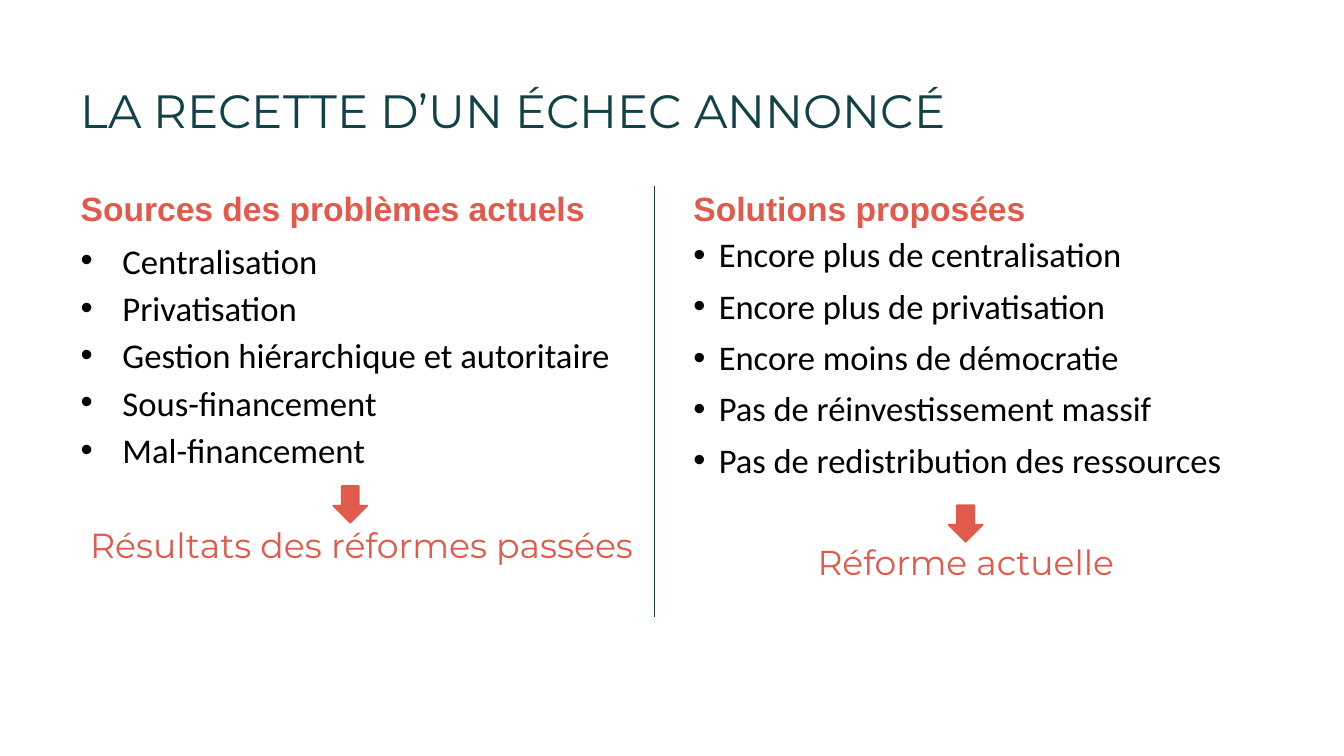
from lxml.etree import SubElement
from pptx import Presentation
from pptx.dml.color import RGBColor
from pptx.enum.shapes import MSO_CONNECTOR as Connector, MSO_SHAPE as Shape
from pptx.enum.text import MSO_ANCHOR as Anchor, MSO_AUTO_SIZE as AutoSize, PP_ALIGN as Align
from pptx.oxml.ns import qn
from pptx.util import Cm, Pt

COLORS = {"teal": "124248", "coral": "E15A4B", "black": "000000"}
TITLE = "LA RECETTE D’UN ÉCHEC ANNONCÉ"
COLUMNS = [
    {
        "heading": "Sources des problèmes actuels",
        "items": ["Centralisation", "Privatisation", "Gestion hiérarchique et autoritaire",
                  "Sous-financement", "Mal-financement"],
        "conclusion": "Résultats des réformes passées",
        "left": 1.27, "heading_width": 10.74, "list_width": 11.13, "list_top": 4.55,
        "size": 18.6, "spacing": 0.8, "indent": 0.79, "gap": 33,
        "arrow": (6.3, 9.19),
    },
    {
        "heading": "Solutions proposées",
        "items": ["Encore plus de centralisation", "Encore plus de privatisation",
                  "Encore moins de démocratie", "Pas de réinvestissement massif",
                  "Pas de redistribution des ressources"],
        "conclusion": "Réforme actuelle",
        "left": 12.85, "heading_width": 10.8, "list_width": 10.8, "list_top": 4.37,
        "size": 18.5, "spacing": 0.9, "indent": 0.48, "gap": 35,
        "arrow": (17.93, 9.55),
    },
]
HEADING_TOP, HEADING_HEIGHT = 3.51, 1.73
LIST_BOTTOM = 11.66
DIVIDER_X = 12.37


def color(name):
    return RGBColor.from_string(COLORS[name])


def place(box, left, top, width, height, anchor=Anchor.TOP):
    box.left, box.top, box.width, box.height = Cm(left), Cm(top), Cm(width), Cm(height)
    frame = box.text_frame
    frame.word_wrap = True
    frame.auto_size = AutoSize.NONE
    frame.vertical_anchor = anchor
    return frame


def set_bullet(para, indent=0):
    properties = para._p.get_or_add_pPr()
    properties.set("marL", str(Cm(indent)))
    properties.set("indent", str(-Cm(indent)))
    if indent:
        SubElement(properties, qn("a:buFont")).set("typeface", "Arial")
        SubElement(properties, qn("a:buChar")).set("char", "•")
    else:
        SubElement(properties, qn("a:buNone"))


def write(para, text, font, size, shade, spacing=0.9, before=0, align=Align.LEFT, bold=False):
    para.text = text
    para.alignment = align
    para.line_spacing = spacing
    para.space_before = Pt(before)
    para.font.name = font
    para.font.size = Pt(size)
    para.font.bold = bold
    para.font.color.rgb = color(shade)


def fill_list(frame, column):
    size, spacing = column["size"], column["spacing"]
    for number, item in enumerate(column["items"]):
        para = frame.add_paragraph() if number else frame.paragraphs[0]
        set_bullet(para, column["indent"])
        write(para, item, "Calibri", size, "black", spacing, 7.5 if number else 0)
    para = frame.add_paragraph()
    set_bullet(para)
    write(para, column["conclusion"], "Montserrat", size, "coral", spacing,
          column["gap"], Align.CENTER)


def add_arrow(page, left, top):
    arrow = page.shapes.add_shape(Shape.DOWN_ARROW, Cm(left), Cm(top), Cm(0.64), Cm(0.69))
    arrow.shadow.inherit = False
    arrow.fill.solid()
    arrow.fill.fore_color.rgb = color("coral")
    arrow.line.color.rgb = color("coral")
    arrow.line.width = Pt(1)


def add_divider(page):
    line = page.shapes.add_connector(Connector.STRAIGHT, Cm(DIVIDER_X), Cm(HEADING_TOP),
                                     Cm(DIVIDER_X), Cm(LIST_BOTTOM))
    line.line.color.rgb = color("teal")
    line.line.width = Pt(0.5)
    SubElement(line._element.spPr, qn("a:effectLst"))


def main():
    deck = Presentation()
    deck.slide_width, deck.slide_height = Cm(25.4), Cm(14.29)
    page = deck.slides.add_slide(deck.slide_layouts[4])
    title, *bodies = page.placeholders

    frame = place(title, 1.27, 0.76, 22.86, 2.77, Anchor.MIDDLE)
    write(frame.paragraphs[0], TITLE, "Montserrat", 25, "teal")

    for column, heading, body in zip(COLUMNS, bodies[::2], bodies[1::2]):
        left, top = column["left"], column["list_top"]
        frame = place(heading, left, HEADING_TOP, column["heading_width"], HEADING_HEIGHT)
        set_bullet(frame.paragraphs[0])
        write(frame.paragraphs[0], column["heading"], "Arial", 18, "coral", bold=True)
        fill_list(place(body, left, top, column["list_width"], LIST_BOTTOM - top), column)
        add_arrow(page, *column["arrow"])
    add_divider(page)
    deck.save("out.pptx")


if __name__ == "__main__":
    main()
